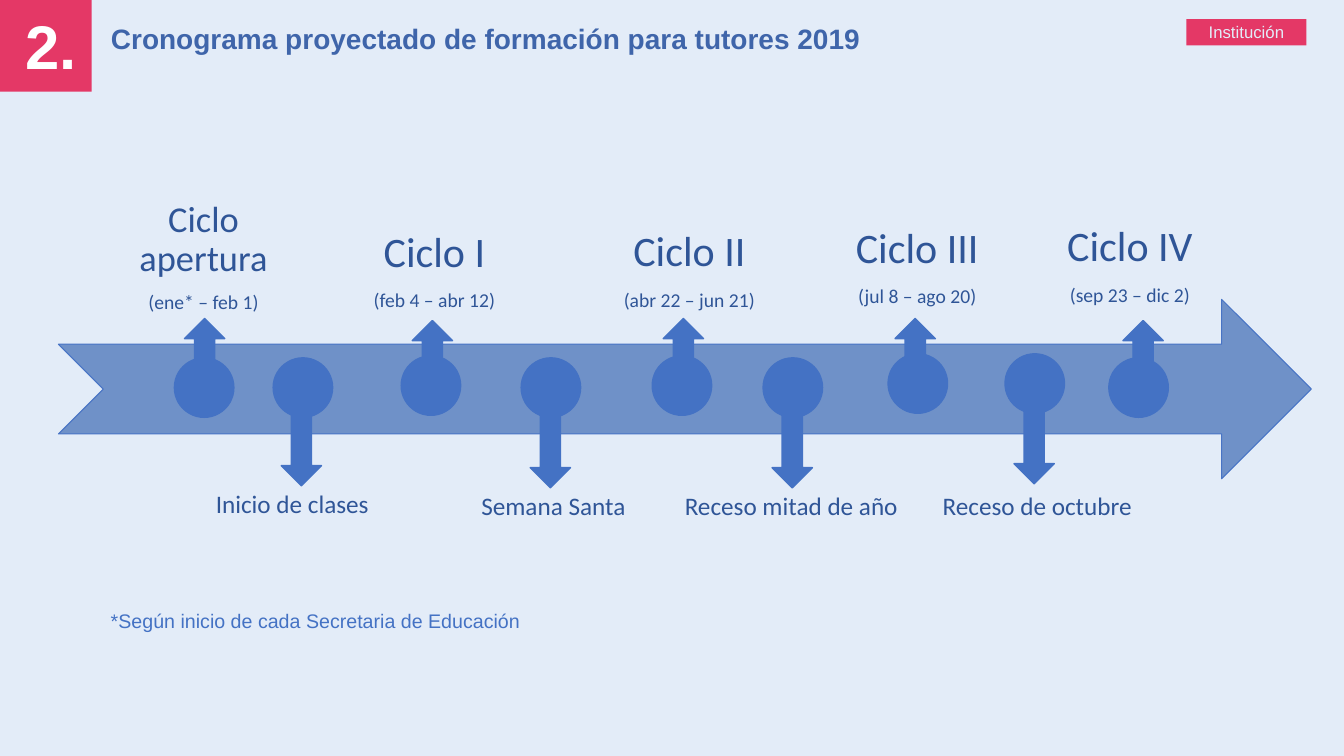
from dataclasses import dataclass

from pptx import Presentation
from pptx.dml.color import RGBColor
from pptx.enum.shapes import MSO_SHAPE
from pptx.enum.text import MSO_ANCHOR, MSO_AUTO_SIZE, PP_ALIGN
from pptx.util import Inches, Pt

RECT = MSO_SHAPE.RECTANGLE
OVAL = MSO_SHAPE.OVAL
UP = MSO_SHAPE.UP_ARROW
DOWN = MSO_SHAPE.DOWN_ARROW
NOTCHED = MSO_SHAPE.NOTCHED_RIGHT_ARROW
TOP, MIDDLE, BOTTOM = MSO_ANCHOR.TOP, MSO_ANCHOR.MIDDLE, MSO_ANCHOR.BOTTOM
LEFT, CENTER = PP_ALIGN.LEFT, PP_ALIGN.CENTER
FIXED = MSO_AUTO_SIZE.NONE

CELL = 0.1
COLS, ROWS = 133.33, 75
DOT = 5.9
STEM_W, STEM_H = 4, 8.3
LABEL_W, LABEL_H = 24, 4


@dataclass(frozen=True)
class Theme:
    back: str = "E3ECF8"
    white: str = "FFFFFF"
    red: str = "E43866"
    title: str = "3F65AA"
    text: str = "2F5597"
    blue: str = "4472C4"
    band: str = "6F91C8"
    edge: str = "4874C5"
    sans: str = "Arial"
    body: str = "Calibri"
    number: int = 44
    head: int = 20
    tag: int = 12
    label: int = 18
    small: int = 14
    gap: float = 0.35


@dataclass(frozen=True)
class Box:
    col: float
    row: float
    wide: float
    high: float


@dataclass(frozen=True)
class Line:
    text: str
    size: int
    color: str
    font: str
    bold: bool = False


@dataclass(frozen=True)
class Cycle:
    name: str
    dates: str
    size: int
    box: Box
    anchor: MSO_ANCHOR
    inset: float
    dot: tuple[float, float]
    stem: tuple[float, float]


@dataclass(frozen=True)
class Break:
    name: str
    middle: float
    row: float
    dot: tuple[float, float]
    stem: tuple[float, float]


THEME = Theme()

CYCLES = [
    Cycle("Ciclo apertura", "(ene* – feb 1)", 26, Box(8.2, 9.4, 24, 23.7), BOTTOM, 2,
          (17.3, 35.5), (18.3, 31.6)),
    Cycle("Ciclo I", "(feb 4 – abr 12)", 30, Box(31.2, 20.6, 23.8, 12.2), TOP, 2.3,
          (39.8, 35.3), (40.9, 31.8)),
    Cycle("Ciclo II", "(abr 22 – jun 21)", 30, Box(56.6, 21.6, 23.6, 11.6), BOTTOM, 2.3,
          (64.7, 35.3), (65.8, 31.6)),
    Cycle("Ciclo III", "(jul 8 – ago 20)", 30, Box(81.8, 20.2, 18.4, 23.7), TOP, 2.3,
          (88.1, 35.1), (88.8, 31.6)),
    Cycle("Ciclo IV", "(sep 23 – dic 2)", 30, Box(102.9, 9, 18.4, 23.7), BOTTOM, 2.3,
          (110, 35.5), (111.4, 31.8)),
]

BREAKS = [
    Break("Inicio de clases", 29, 48, (27.1, 35.5), (27.9, 39.9)),
    Break("Semana Santa", 54.9, 48.2, (51.7, 35.5), (52.6, 40.1)),
    Break("Receso mitad de año", 78.5, 48.2, (75.7, 35.5), (76.6, 40.1)),
    Break("Receso de octubre", 102.9, 48.2, (99.7, 35.1), (100.6, 39.7)),
]


def span(count: float) -> int:
    return Inches(count * CELL)


def place(box: Box) -> tuple[int, int, int, int]:
    return span(box.col), span(box.row), span(box.wide), span(box.high)


def tint(code: str) -> RGBColor:
    return RGBColor.from_string(code)


def draw(slide, kind: MSO_SHAPE, box: Box, fill: str, edge: str = "", width: float = 1):
    shape = slide.shapes.add_shape(kind, *place(box))
    shape.shadow.inherit = False
    shape.fill.solid()
    shape.fill.fore_color.rgb = tint(fill)
    if edge:
        shape.line.color.rgb = tint(edge)
        shape.line.width = Pt(width)
    else:
        shape.line.fill.background()
    return shape


def write(shape, lines: list[Line], align: PP_ALIGN, anchor: MSO_ANCHOR = TOP,
          side: float = 1, edge: float = 0.5, lead: float = 1) -> None:
    frame = shape.text_frame
    frame.auto_size = FIXED
    frame.word_wrap = True
    frame.vertical_anchor = anchor
    frame.margin_left = frame.margin_right = span(side)
    frame.margin_top = frame.margin_bottom = span(edge)
    for rank, line in enumerate(lines):
        para = frame.add_paragraph() if rank else frame.paragraphs[0]
        para.text = line.text
        para.alignment = align
        para.line_spacing = lead
        para.space_before = Pt(0)
        para.space_after = Pt(THEME.gap * line.size if len(lines) > 1 else 0)
        para.font.size = Pt(line.size)
        para.font.name = line.font
        para.font.bold = line.bold
        para.font.color.rgb = tint(line.color)


def label(slide, box: Box, lines: list[Line], align: PP_ALIGN,
          anchor: MSO_ANCHOR = TOP, side: float = 1, edge: float = 0.5,
          lead: float = 1) -> None:
    write(slide.shapes.add_textbox(*place(box)), lines, align, anchor, side, edge, lead)


def header(slide) -> None:
    title = slide.shapes.title
    title.left, title.top, title.width, title.height = place(Box(10, 1.6, 78.8, 4.4))
    write(title, [Line("Cronograma proyectado de formación para tutores 2019",
                       THEME.head, THEME.title, THEME.sans, True)], LEFT)
    draw(slide, RECT, Box(0, 0, 9.1, 9.1), THEME.red)
    label(slide, Box(1.5, 0.3, 8, 8.4),
          [Line("2.", THEME.number, THEME.white, THEME.sans, True)], LEFT)
    tag = draw(slide, RECT, Box(117.7, 1.9, 11.9, 2.6), THEME.red)
    write(tag, [Line("Institución", THEME.tag, THEME.back, THEME.sans)],
          CENTER, MIDDLE, 0, 0)


def stop(slide, kind: MSO_SHAPE, dot: tuple[float, float],
         stem: tuple[float, float]) -> None:
    draw(slide, kind, Box(*stem, STEM_W, STEM_H), THEME.blue, THEME.blue)
    draw(slide, OVAL, Box(*dot, DOT, DOT), THEME.blue, THEME.blue)


def main() -> None:
    deck = Presentation()
    deck.slide_width, deck.slide_height = span(COLS), span(ROWS)
    slide = deck.slides.add_slide(deck.slide_layouts[5])
    slide.background.fill.solid()
    slide.background.fill.fore_color.rgb = tint(THEME.back)

    header(slide)
    draw(slide, NOTCHED, Box(5.8, 29.7, 124.3, 17.8), THEME.band, THEME.edge, 0.75)

    for item in CYCLES:
        stop(slide, UP, item.dot, item.stem)
        lines = [Line(item.name, item.size, THEME.text, THEME.body),
                 Line(item.dates, THEME.small, THEME.text, THEME.body)]
        label(slide, item.box, lines, CENTER, item.anchor, item.inset, item.inset, 0.9)

    for item in BREAKS:
        stop(slide, DOWN, item.dot, item.stem)
        box = Box(item.middle - LABEL_W / 2, item.row, LABEL_W, LABEL_H)
        label(slide, box, [Line(item.name, THEME.label, THEME.text, THEME.body)], CENTER)

    label(slide, Box(10, 59.9, 67.9, 3.4),
          [Line("*Según inicio de cada Secretaria de Educación",
                THEME.small, THEME.blue, THEME.sans)], LEFT)
    deck.save("out.pptx")


if __name__ == "__main__":
    main()
